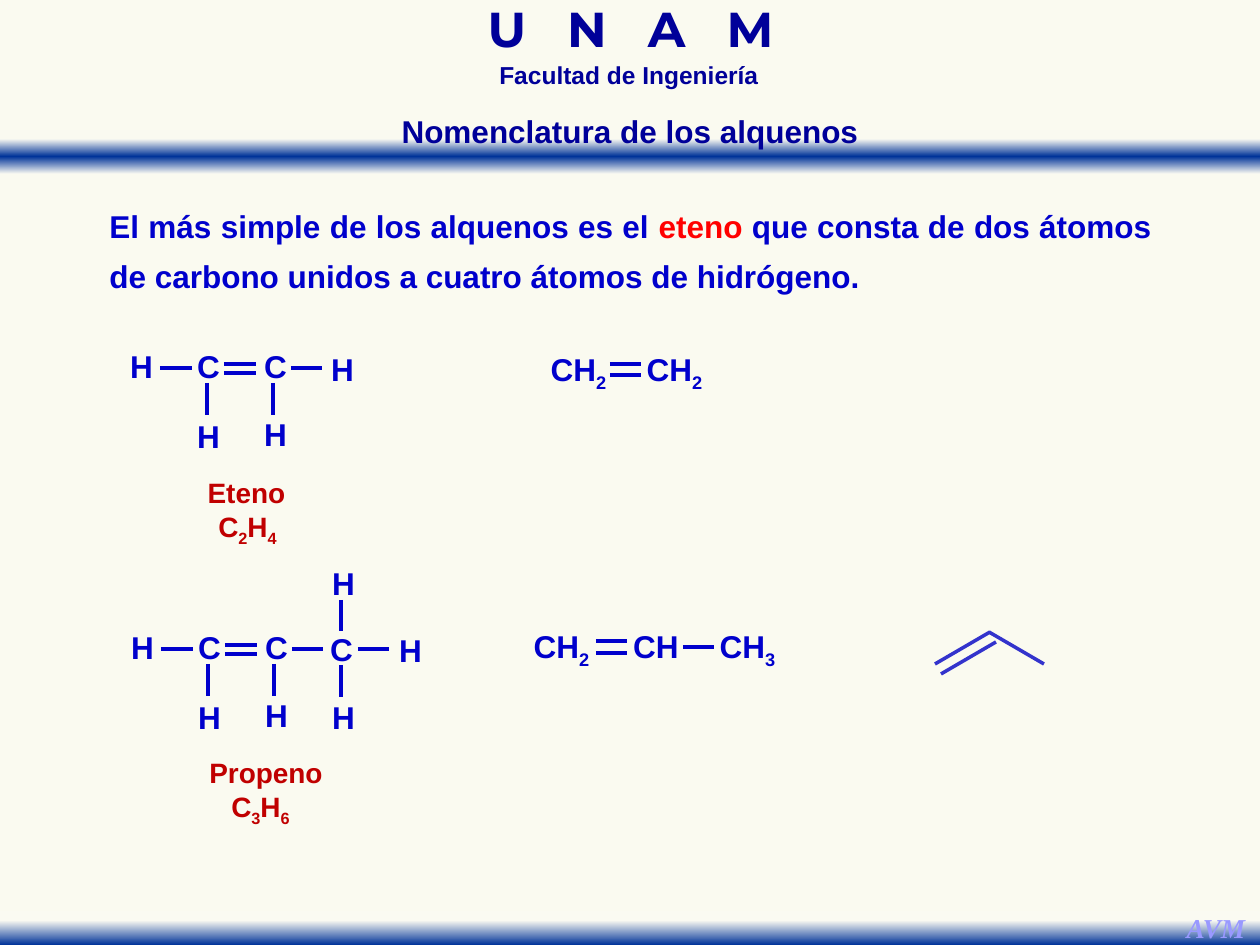
"""Build a slide on the nomenclature of alkenes, with ethene and propene structures."""
from copy import deepcopy
from itertools import groupby

from lxml.etree import SubElement
from pptx import Presentation
from pptx.dml.color import RGBColor
from pptx.enum.shapes import MSO_CONNECTOR, MSO_SHAPE
from pptx.enum.text import MSO_AUTO_SIZE, PP_ALIGN
from pptx.oxml.ns import qn
from pptx.util import Emu, Pt

COLORS = {
    "background": "FAFAF0", "fade": "FAFAF2", "band": "003399", "heading": "000099",
    "signature": "9999FF", "body": "0000CC", "highlight": "FF0000",
    "compound": "C00000", "skeleton": "3333CC",
}
FORMATS = {
    "university": {"name": "Montserrat", "size": Pt(28), "bold": True},
    "faculty": {"name": "Arial", "size": Pt(14), "bold": True},
    "signature": {"name": "Times New Roman", "size": Pt(15.6), "bold": True, "italic": True},
    "body": {"name": "Arial", "size": Pt(18), "bold": True},
    "compound": {"name": "Arial", "size": Pt(16), "bold": True},
}
SCALE = 914400 / 126


def add_text(shapes, box, pieces, style="body", wrap=False, align=PP_ALIGN.CENTER, spacing=None):
    label = shapes.add_textbox(*[Emu(round(v * SCALE)) for v in box])
    frame = label.text_frame
    frame.word_wrap = wrap
    frame.auto_size = MSO_AUTO_SIZE.SHAPE_TO_FIT_TEXT
    paragraph = frame.paragraphs[0]
    paragraph.alignment = align
    paragraph.line_spacing = spacing
    for text, color in pieces:
        for subscript, letters in groupby(text, str.isdigit):
            run = paragraph.add_run()
            run.text = "".join(letters)
            for attribute, value in FORMATS[style].items():
                setattr(run.font, attribute, value)
            run.font.color.rgb = RGBColor.from_string(COLORS[color])
            if subscript:
                run.font._element.set("baseline", "-25000")
    return paragraph


def add_bond(shapes, ends, color="body"):
    bond = shapes.add_connector(MSO_CONNECTOR.STRAIGHT, *[Emu(round(v * SCALE)) for v in ends])
    bond.line.width = Pt(2)
    bond.line.color.rgb = RGBColor.from_string(COLORS[color])
    SubElement(bond.element.spPr, qn("a:effectLst"))


deck = Presentation()
deck.slide_width = Emu(round(1260 * SCALE))
deck.slide_height = Emu(round(945 * SCALE))
slide = deck.slides.add_slide(deck.slide_layouts[6])
slide.background.fill.solid()
slide.background.fill.fore_color.rgb = RGBColor.from_string(COLORS["background"])

for top, height, stops in (
    (139, 35, [(0, "fade"), (0.5, "band"), (1, "fade")]),
    (911, 34, [(0.28, "fade"), (1, "band")]),
):
    band = slide.shapes.add_shape(
        MSO_SHAPE.RECTANGLE, 0, Emu(round(top * SCALE)), deck.slide_width, Emu(round(height * SCALE)))
    band.shadow.inherit = False
    band.line.fill.background()
    band.fill.gradient()
    band.fill.gradient_angle = 270
    stop_list = band.element.xpath(".//a:gsLst")[0]
    for extra in stops[2:]:
        stop_list.append(deepcopy(stop_list[0]))
    for stop, (position, color) in zip(band.fill.gradient_stops, stops):
        stop.position = position
        stop.color.rgb = RGBColor.from_string(COLORS[color])

university = add_text(slide.shapes, (384, 8, 493, 54), [("U N A ", "heading"), ("M", "heading")],
                      "university", wrap=True, spacing=0.7)
university.runs[0].font._element.set("spc", "780")
add_text(slide.shapes, (404, 62, 450, 34), [("Facultad de Ingeniería", "heading")],
         "faculty", wrap=True, spacing=0.7)
add_text(slide.shapes, (1173, 905, 86, 47), [("AVM", "signature")], "signature")
add_text(slide.shapes, (387, 106, 486, 50), [("Nomenclatura de los alquenos", "heading")])
add_text(slide.shapes, (97, 190, 1067, 112), [
    ("El más simple de los alquenos es el ", "body"),
    ("eteno", "highlight"),
    (" que consta de dos átomos de carbono unidos a cuatro átomos de hidrógeno.", "body"),
], wrap=True, align=PP_ALIGN.JUSTIFY, spacing=1.3)

for name, left, top, width in (
    ("Eteno", 195, 469, 103), ("C2H4", 204, 503, 87),
    ("Propeno", 196, 749, 140), ("C3H6", 217, 783, 87),
):
    add_text(slide.shapes, (left, top, width, 47), [(name, "compound")], "compound")

vinyl_atoms = [("H", 117, 341), ("C", 184, 341), ("C", 251, 341), ("H", 184, 411), ("H", 251, 409)]
vinyl_bonds = [
    (160, 368, 192, 368), (224, 364, 256, 364), (224, 373, 256, 373),
    (291, 368, 322, 368), (207, 383, 207, 415), (273, 383, 273, 415),
]
methyl_atoms = [("C", 317, 624), ("H", 319, 692), ("H", 386, 625), ("H", 319, 558)]
methyl_bonds = [(341, 665, 341, 697), (358, 649, 389, 649), (341, 600, 341, 631)]
for dx, dy, end_atoms, end_bonds in (
    (0, 0, [("H", 318, 344)], []),
    (1, 281, methyl_atoms, methyl_bonds),
):
    molecule = slide.shapes.add_group_shape().shapes
    for symbol, left, top in [(s, x + dx, y + dy) for s, x, y in vinyl_atoms] + end_atoms:
        add_text(molecule, (left, top, 49, 50), [(symbol, "body")])
    for x1, y1, x2, y2 in vinyl_bonds:
        add_bond(molecule, (x1 + dx, y1 + dy, x2 + dx, y2 + dy))
    for ends in end_bonds:
        add_bond(molecule, ends)

for top, units, bonds in (
    (344, [("CH2", 537, 83), ("CH2", 633, 83)], [(610, 364, 641, 364), (610, 375, 641, 375)]),
    (621, [("CH2", 520, 83), ("CH", 620, 72), ("CH3", 706, 83)],
     [(596, 641, 627, 641), (596, 653, 627, 653), (683, 647, 714, 647)]),
):
    condensed = slide.shapes.add_group_shape().shapes
    for unit, left, width in units:
        add_text(condensed, (left, top, width, 50), [(unit, "body")])
    for ends in bonds:
        add_bond(condensed, ends)

skeleton = slide.shapes.add_group_shape().shapes
for ends in ((935, 664, 990, 632), (1044, 664, 989, 632), (941, 674, 996, 642)):
    add_bond(skeleton, ends, "skeleton")

deck.save("out.pptx")
